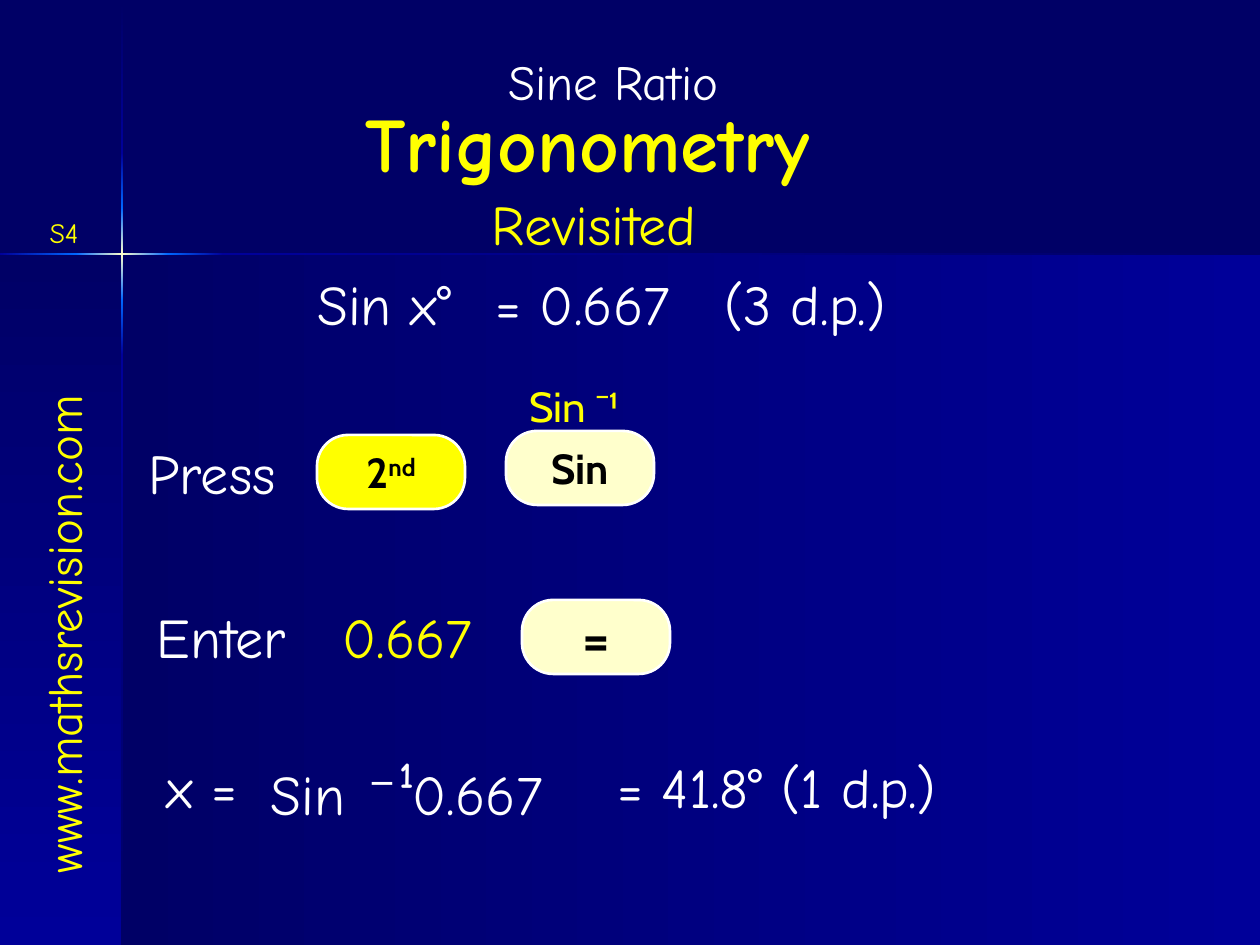
from copy import deepcopy

from lxml import etree
from pptx import Presentation
from pptx import util as u
from pptx.dml.color import RGBColor
from pptx.enum import shapes, text
from pptx.oxml.ns import qn

PX = 914400 / 126  # EMU in one px

NIGHT = RGBColor(0x00, 0x00, 0x66)
NAVY = RGBColor(0x00, 0x00, 0x99)
BLUE = RGBColor(0x00, 0x66, 0xFF)
CREAM = RGBColor(0xFF, 0xFF, 0xCC)
YELLOW = RGBColor(0xFF, 0xFF, 0x00)
WHITE = RGBColor(0xFF, 0xFF, 0xFF)
BLACK = RGBColor(0x00, 0x00, 0x00)

HAND, KEY_FONT, MONO = "Comic Neue", "Cabin", "DejaVu Sans Mono"
LEFT, CENTER = text.PP_ALIGN.LEFT, text.PP_ALIGN.CENTER
LINE_H = 81  # height of a 32 pt line of working
KEY_W, KEY_H = 148, 74


def px(*lengths):
    return [u.Emu(round(n * PX)) for n in lengths]


def add_run(paragraph, words, size, color, font=HAND, bold=False, baseline=None):
    run = paragraph.add_run()
    run.text = words
    run.font.size = u.Pt(size)
    run.font.name = font
    run.font.bold = bold
    run.font.color.rgb = color
    if baseline:
        run.font._element.set("baseline", str(baseline * 1000))


def add_label(slide, box, runs, align=LEFT, wrap=True):
    """Text box at box; each run holds the arguments of add_run."""
    label = slide.shapes.add_textbox(*px(*box))
    frame = label.text_frame
    frame.word_wrap = wrap
    frame.auto_size = text.MSO_AUTO_SIZE.SHAPE_TO_FIT_TEXT
    paragraph = frame.paragraphs[0]
    paragraph.alignment = align
    for run in runs:
        add_run(paragraph, *run)
    return label


def add_key(slide, left, top, fill, runs):
    """Calculator key."""
    key = slide.shapes.add_shape(shapes.MSO_SHAPE.ROUNDED_RECTANGLE,
                                 *px(left, top, KEY_W, KEY_H))
    key.shadow.inherit = False
    key.adjustments[0] = 0.42
    key.fill.solid()
    key.fill.fore_color.rgb = fill
    key.line.color.rgb = WHITE
    key.line.width = u.Pt(1.5)
    frame = key.text_frame
    frame.word_wrap = False
    frame.vertical_anchor = text.MSO_ANCHOR.MIDDLE
    frame.paragraphs[0].alignment = CENTER
    for run in runs:
        add_run(frame.paragraphs[0], *run)


def add_gradient(slide, box, colors, vertical):
    """Borderless rectangle with evenly spaced colours."""
    band = slide.shapes.add_shape(shapes.MSO_SHAPE.RECTANGLE, *px(*box))
    band.shadow.inherit = False
    band.line.fill.background()
    band.fill.gradient()
    band.fill.gradient_angle = 270 if vertical else 0
    stop_list = band._element.spPr.find(".//" + qn("a:gsLst"))
    for _ in colors[2:]:
        stop_list.append(deepcopy(stop_list[0]))
    for i, (stop, color) in enumerate(zip(band.fill.gradient_stops, colors)):
        stop.color.rgb = color
        stop.position = i / (len(colors) - 1)


def draw_backdrop(slide, left, top, width, height):
    """Two shaded panels and the glowing cross where they meet."""
    cross_x, cross_y = left + 122, top + 254
    right, bottom = left + width, top + height
    add_gradient(slide, (cross_x, cross_y, right - cross_x, bottom - cross_y),
                 [NIGHT, NAVY], False)
    add_gradient(slide, (left, cross_y, cross_x - left, bottom - cross_y),
                 [NIGHT, NAVY], True)

    glow = [[NIGHT, NAVY], [NAVY, BLUE], [BLUE, CREAM, BLUE], [BLUE, NAVY], [NAVY, NIGHT]]
    arm = [-101, -46, 46, 101]  # glow edges, measured from the cross
    down = [top + 1, *(cross_y + d for d in arm), bottom]
    for start, end, colors in zip(down, down[1:], glow):
        add_gradient(slide, (cross_x - 1, start, 2, end - start), colors, True)
    across = [left, *(cross_x + d for d in arm[1:]), right]
    for start, end, colors in zip(across, across[1:], glow[1:]):
        add_gradient(slide, (start, cross_y - 1, end - start, 2), colors, False)


def draw_sidebar(slide, left, top):
    """Class name and the web address that runs upwards."""
    add_label(slide, (left + 33, top, 62, 46), [("S4", 16, YELLOW)], CENTER, wrap=False)
    address = add_label(slide, (left - 213, top + 364, 553, 72),
                        [("www.mathsrevision.com", 28, YELLOW)], wrap=False)
    address.rotation = 270


def draw_header(slide, left, top):
    title = slide.shapes.title
    title.left, title.top, title.width, title.height = px(left, top + 44, 518, 106)
    frame = title.text_frame
    frame.word_wrap = True
    frame.auto_size = text.MSO_AUTO_SIZE.NONE
    frame.vertical_anchor = text.MSO_ANCHOR.TOP
    frame.paragraphs[0].alignment = LEFT
    add_run(frame.paragraphs[0], "Trigonometry", 44, YELLOW, HAND, True)

    add_label(slide, (left + 126, top + 138, 267, LINE_H),
              [("Revisited", 32, YELLOW)], wrap=False)
    add_label(slide, (left + 83, top, 355, 76), [("Sine Ratio", 28, WHITE)], CENTER)


def draw_equation(slide, left, top):
    add_label(slide, (left, top, 189, LINE_H), [("Sin x°", 32, WHITE)])
    value = add_label(slide, (left + 178, top, 462, LINE_H),
                      [("= 0.667\t(3 d.p.)", 32, WHITE)])
    # Tab stop that sets the rounding note apart
    properties = value.text_frame.paragraphs[0]._p.get_or_add_pPr()
    tabs = etree.SubElement(properties, qn("a:tabLst"))
    etree.SubElement(tabs, qn("a:tab"), pos=str(px(229)[0]), algn="l")


def draw_press_row(slide, left, top):
    add_label(slide, (left, top, 166, LINE_H), [("Press", 32, WHITE)], wrap=False)
    add_key(slide, left + 181, top + 3, YELLOW,
            [("2", 24, BLACK, KEY_FONT, True), ("nd", 24, BLACK, KEY_FONT, True, 30)])
    add_key(slide, left + 370, top - 1, CREAM, [("Sin", 24, BLACK, KEY_FONT, True)])
    add_label(slide, (left + 381, top - 58, 125, 63),
              [("Sin ⁻¹", 24, YELLOW, KEY_FONT)], wrap=False)


def draw_enter_row(slide, left, top):
    add_label(slide, (left, top, 174, LINE_H), [("Enter", 32, WHITE)], wrap=False)
    add_label(slide, (left + 186, top, 175, LINE_H), [("0.667", 32, YELLOW)], wrap=False)
    add_key(slide, left + 378, top + 4, CREAM, [("=", 32, BLACK, KEY_FONT, True)])


def draw_answer_row(slide, left, top):
    add_label(slide, (left, top, 105, LINE_H), [("x =", 32, WHITE)])
    add_label(slide, (left + 104, top, 357, 88),
              [("Sin ", 32, WHITE), ("⁻", 36, WHITE, MONO),
               ("¹", 36, WHITE), ("0.667", 32, WHITE)])
    add_label(slide, (left + 451, top, 410, LINE_H), [("= 41.8° (1 d.p.)", 32, WHITE)])


def main():
    deck = Presentation()
    deck.slide_width, deck.slide_height = px(1260, 945)
    slide = deck.slides.add_slide(deck.slide_layouts[5])
    slide.background.fill.solid()
    slide.background.fill.fore_color.rgb = NIGHT

    draw_backdrop(slide, 0, 0, 1260, 945)
    draw_sidebar(slide, 0, 209)
    draw_header(slide, 353, 45)
    draw_equation(slide, 305, 263)
    draw_press_row(slide, 136, 432)
    draw_enter_row(slide, 144, 596)
    draw_answer_row(slide, 154, 746)
    deck.save("out.pptx")


if __name__ == "__main__":
    main()
